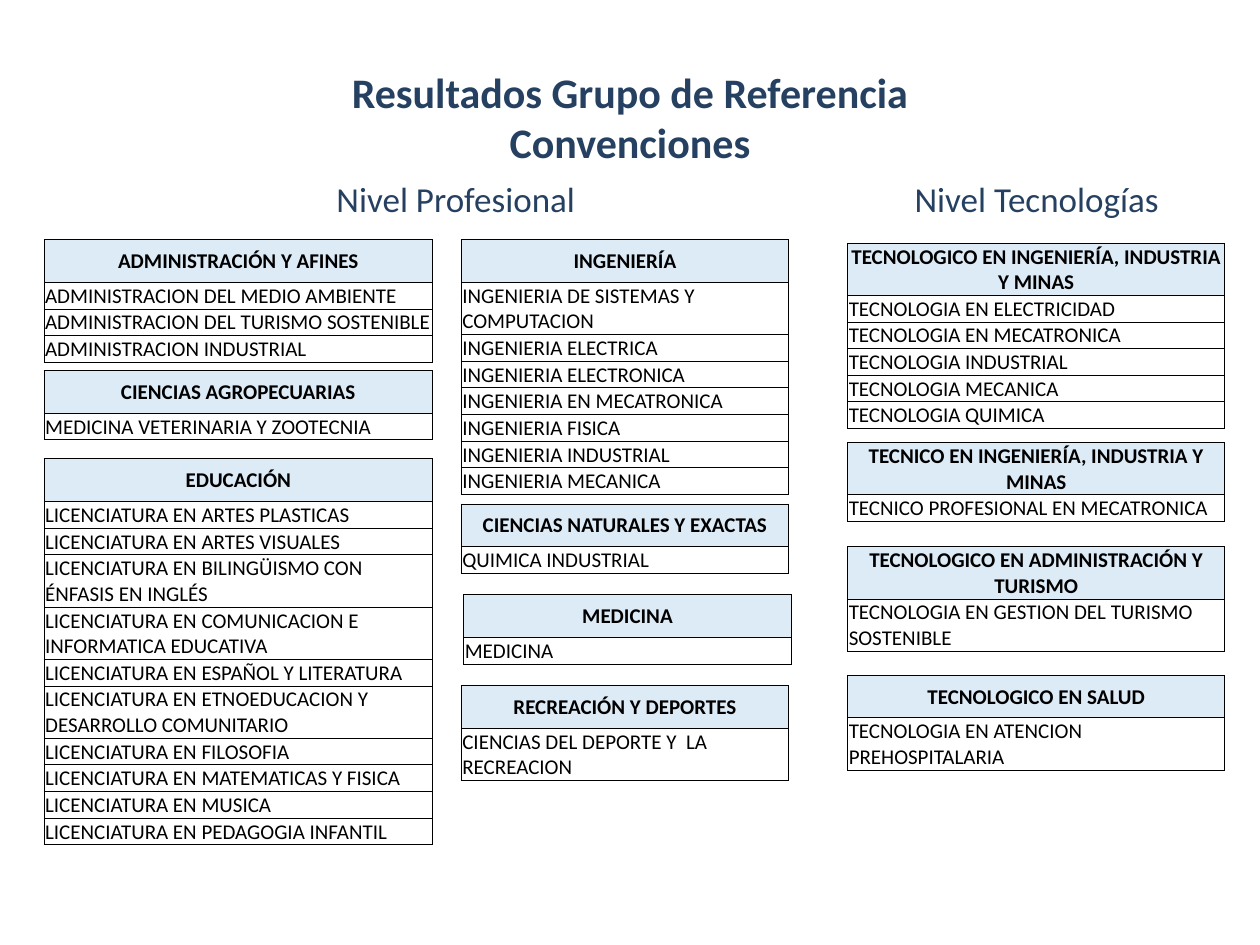
from lxml import etree
from pptx import Presentation
from pptx import util as u
from pptx.dml.color import RGBColor
from pptx.enum import text
from pptx.oxml import ns

NAVY = RGBColor(0x25, 0x40, 0x61)
BLACK = RGBColor(0, 0, 0)
PALE_BLUE = RGBColor(0xDD, 0xEB, 0xF7)

MIDDLE = text.MSO_ANCHOR.MIDDLE
BOTTOM = text.MSO_ANCHOR.BOTTOM

COLUMNS = [
    (0.89, 7.83, MIDDLE, [
        (0, 4.83, "ADMINISTRACIÓN Y AFINES", [
            "ADMINISTRACION DEL MEDIO AMBIENTE",
            "ADMINISTRACION DEL TURISMO SOSTENIBLE",
            "ADMINISTRACION INDUSTRIAL"]),
        (0, 7.47, "CIENCIAS AGROPECUARIAS", ["MEDICINA VETERINARIA Y ZOOTECNIA"]),
        (0, 9.25, "EDUCACIÓN", [
            "LICENCIATURA EN ARTES PLASTICAS",
            "LICENCIATURA EN ARTES VISUALES",
            "LICENCIATURA EN BILINGÜISMO CON ÉNFASIS EN INGLÉS",
            "LICENCIATURA EN COMUNICACION E INFORMATICA EDUCATIVA",
            "LICENCIATURA EN ESPAÑOL Y LITERATURA",
            "LICENCIATURA EN ETNOEDUCACION Y DESARROLLO COMUNITARIO",
            "LICENCIATURA EN FILOSOFIA",
            "LICENCIATURA EN MATEMATICAS Y FISICA",
            "LICENCIATURA EN MUSICA",
            "LICENCIATURA EN PEDAGOGIA INFANTIL"]),
    ]),
    (9.3, 6.6, MIDDLE, [
        (0, 4.83, "INGENIERÍA", [
            "INGENIERIA DE SISTEMAS Y COMPUTACION",
            "INGENIERIA ELECTRICA",
            "INGENIERIA ELECTRONICA",
            "INGENIERIA EN MECATRONICA",
            "INGENIERIA FISICA",
            "INGENIERIA INDUSTRIAL",
            "INGENIERIA MECANICA"]),
        (0, 10.16, "CIENCIAS NATURALES Y EXACTAS", ["QUIMICA INDUSTRIAL"]),
        (0.05, 11.99, "MEDICINA", ["MEDICINA"]),
        (0, 13.82, "RECREACIÓN Y DEPORTES", ["CIENCIAS DEL DEPORTE Y  LA RECREACION"]),
    ]),
    (17.09, 7.6, BOTTOM, [
        (0, 4.9, "TECNOLOGICO EN INGENIERÍA, INDUSTRIA Y MINAS", [
            "TECNOLOGIA EN ELECTRICIDAD",
            "TECNOLOGIA EN MECATRONICA",
            "TECNOLOGIA INDUSTRIAL",
            "TECNOLOGIA MECANICA",
            "TECNOLOGIA QUIMICA"]),
        (0, 8.92, "TECNICO EN INGENIERÍA, INDUSTRIA Y MINAS", [
            "TECNICO PROFESIONAL EN MECATRONICA"]),
        (0, 11.02, "TECNOLOGICO EN ADMINISTRACIÓN Y TURISMO", [
            "TECNOLOGIA EN GESTION DEL TURISMO SOSTENIBLE"]),
        (0, 13.61, "TECNOLOGICO EN SALUD", ["TECNOLOGIA EN ATENCION PREHOSPITALARIA"]),
    ]),
]


class Sheet:
    title_style = {"size": u.Pt(24), "bold": True, "color": NAVY}
    level_style = {"size": u.Pt(20), "bold": False, "color": NAVY}
    head_style = {"size": u.Pt(12), "bold": True, "color": BLACK}
    item_style = {"size": u.Pt(12), "bold": False, "color": BLACK}
    cell_margins = {"margin_left": u.Cm(0.02), "margin_right": u.Cm(0.02),
                    "margin_top": u.Cm(0.02), "margin_bottom": u.Cm(0)}

    def __init__(self, page):
        self.page = page

    def apply(self, target, values):
        for name, value in values.items():
            setattr(target, name, value)

    def add_words(self, para, content, style, align):
        para.alignment = align
        for number, line in enumerate(content.splitlines()):
            if number:
                para.add_line_break()
            span = para.add_run()
            span.text = line
            span.font.name = "Calibri"
            for name, value in style.items():
                if name == "color":
                    span.font.color.rgb = value
                else:
                    setattr(span.font, name, value)

    def title(self, content, left, top, width, height):
        box = self.page.shapes.title
        self.apply(box, {"left": u.Cm(left), "top": u.Cm(top),
                         "width": u.Cm(width), "height": u.Cm(height)})
        box.text_frame.vertical_anchor = MIDDLE
        self.add_words(box.text_frame.paragraphs[0], content, self.title_style,
                       text.PP_ALIGN.CENTER)

    def level(self, content, left):
        box = self.page.shapes.add_textbox(u.Cm(left), u.Cm(3.45), u.Cm(6.8), u.Cm(1.12))
        self.apply(box.text_frame, {"word_wrap": True,
                                    "auto_size": text.MSO_AUTO_SIZE.SHAPE_TO_FIT_TEXT})
        self.add_words(box.text_frame.paragraphs[0], content, self.level_style,
                       text.PP_ALIGN.CENTER)

    def borders(self, cell):
        props = cell._tc.get_or_add_tcPr()
        for place, side in enumerate(("a:lnL", "a:lnR", "a:lnT", "a:lnB")):
            line = etree.Element(ns.qn(side), w=str(u.Pt(0.5)))
            fill = etree.SubElement(line, ns.qn("a:solidFill"))
            etree.SubElement(fill, ns.qn("a:srgbClr"), val=str(BLACK))
            props.insert(place, line)

    def table(self, left, top, width, head, items, anchor):
        frame = self.page.shapes.add_table(len(items) + 1, 1, u.Cm(left), u.Cm(top),
                                           u.Cm(width), u.Cm(0.86 + 0.43 * len(items)))
        table = frame.table
        self.apply(table, {"first_row": False, "horz_banding": False})
        for number, content in enumerate([head, *items]):
            is_head = number == 0
            table.rows[number].height = u.Cm(0.86 if is_head else 0.43)
            cell = table.cell(number, 0)
            self.apply(cell, self.cell_margins)
            cell.vertical_anchor = MIDDLE if is_head else anchor
            if is_head:
                cell.fill.solid()
                cell.fill.fore_color.rgb = PALE_BLUE
            else:
                cell.fill.background()
            self.borders(cell)
            self.add_words(cell.text_frame.paragraphs[0], content,
                           self.head_style if is_head else self.item_style,
                           text.PP_ALIGN.CENTER if is_head else text.PP_ALIGN.LEFT)


def main():
    deck = Presentation()
    deck.slide_width, deck.slide_height = u.Cm(25.4), u.Cm(19.05)
    sheet = Sheet(deck.slides.add_slide(deck.slide_layouts[5]))
    sheet.title("""Resultados Grupo de Referencia
Convenciones""", 1.27, 0.76, 22.86, 3.18)
    for left, width, anchor, groups in COLUMNS:
        for shift, top, head, items in groups:
            sheet.table(left + shift, top, width, head, items, anchor)
    sheet.level("Nivel Profesional", 5.79)
    sheet.level("Nivel Tecnologías", 17.5)
    deck.save("out.pptx")


if __name__ == "__main__":
    main()
